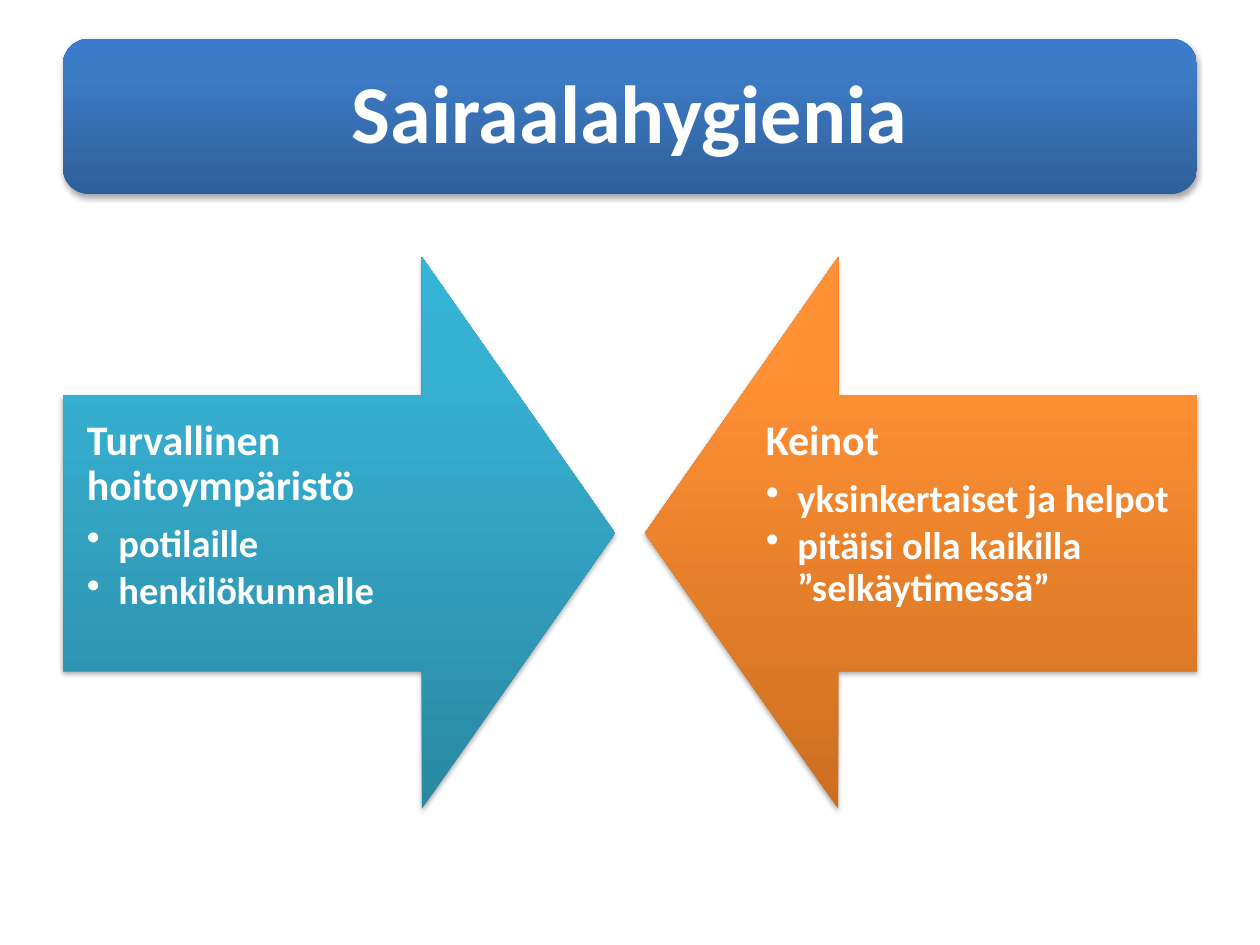
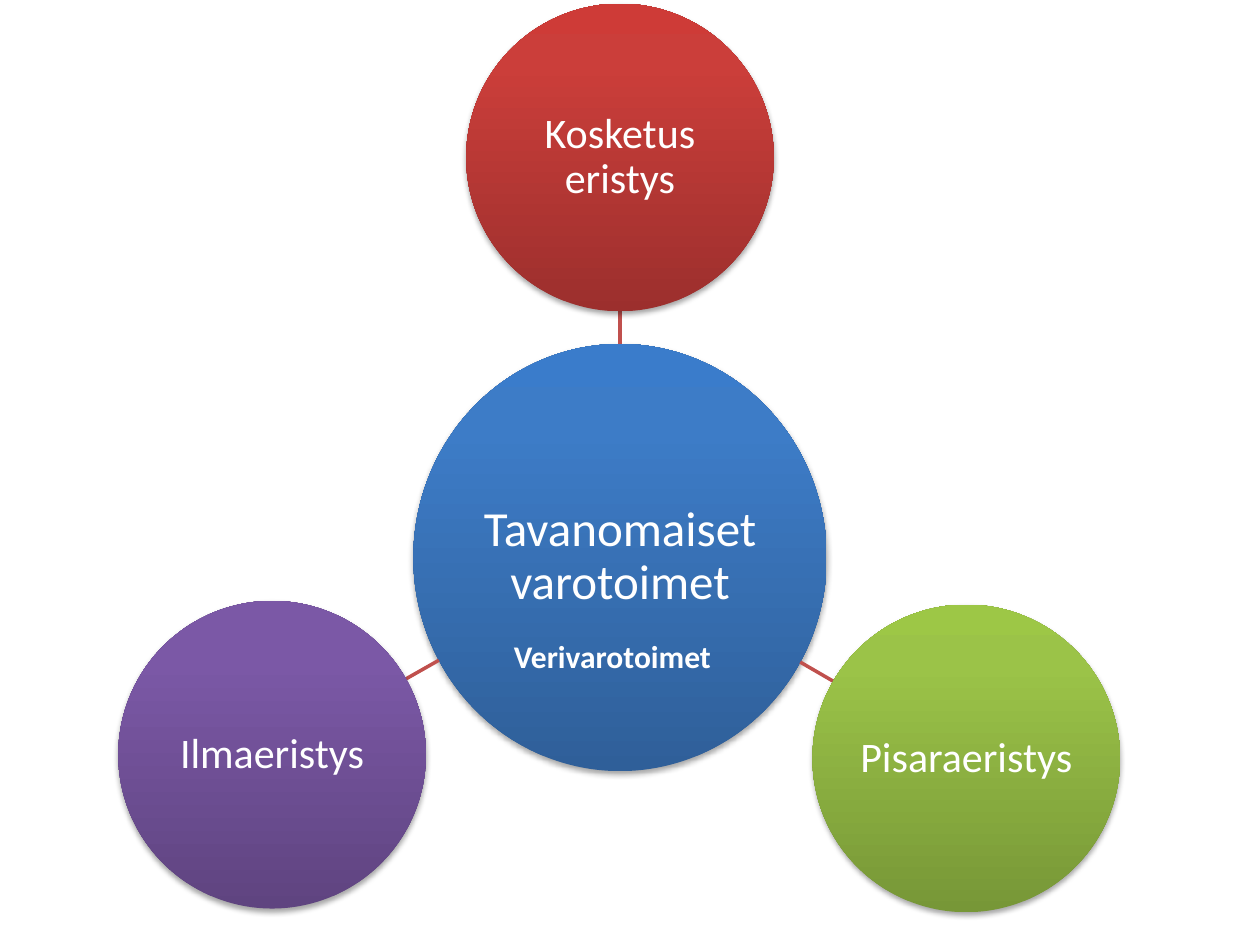
import math
from dataclasses import dataclass

from pptx import Presentation
from pptx.dml.color import RGBColor
from pptx.enum import shapes, text
from pptx.oxml import parse_xml
from pptx.oxml.ns import nsdecls, qn
from pptx.util import Pt


@dataclass(frozen=True)
class Theme:
    font: str = "Calibri"
    ink: str = "FFFFFF"
    spoke: str = "C0504D"
    spoke_width: float = 2
    title: float = 47
    hub: float = 28
    heading: float = 24
    bullet: float = 22
    note: float = 18


THEME = Theme()

# Gradients run from the bottom (0 %) over 80 % to the top (100 %).
GRADIENTS = {
    "blue": ("2F5F99", "3D7CC7", "3A7CCB"),
    "teal": ("2A88A2", "37B1D2", "34B4D6"),
    "orange": ("CC6E20", "FF9034", "FF9136"),
    "red": ("9C2F2D", "CB3E3A", "CE3B37"),
    "green": ("779737", "9BC348", "9DC746"),
    "purple": ("5F4480", "7B58A6", "7C57A8"),
}

TITLE = "Sairaalahygienia"
ARROWS = [
    {"heading": "Turvallinen hoitoympäristö", "colour": "teal", "points": "right",
     "bullets": ["potilaille", "henkilökunnalle"]},
    {"heading": "Keinot", "colour": "orange", "points": "left",
     "bullets": ["yksinkertaiset ja helpot", "pitäisi olla kaikilla ”selkäytimessä”"]},
]
HUB = "Tavanomaiset varotoimet"
HUB_NOTE = "Verivarotoimet"
ISOLATIONS = [  # label, gradient, centre
    ("Kosketus eristys", "red", (354.3, 90)),
    ("Pisaraeristys", "green", (552.2, 433.4)),
    ("Ilmaeristys", "purple", (155.5, 431.3)),
]

SLIDE_W, SLIDE_H, MARGIN = 720, 540, 36
ARROW_SIDE, ARROW_TOP = 315.4, 146.9
ARROW_TEXT_W = 260
HUB_CENTRE, HUB_SIZE = (354.3, 318.6), (236.2, 244.1)
ISOLATION_SIDE = 175.8
HANGING = 18


def points(*lengths):
    return [Pt(length) for length in lengths]


def add_raised(slide, kind, box, colour):
    """Add a preset shape with a vertical gradient, no outline and a soft shadow."""
    shape = slide.shapes.add_shape(kind, *points(*box))
    stops = "".join(
        f'<a:gs pos="{pos}"><a:srgbClr val="{value}"/></a:gs>'
        for pos, value in zip((0, 80000, 100000), GRADIENTS[colour]))
    properties = shape.element.spPr
    properties.insert(2, parse_xml(
        f'<a:gradFill {nsdecls("a")} rotWithShape="0"><a:gsLst>{stops}</a:gsLst>'
        '<a:lin ang="16200000" scaled="0"/></a:gradFill>'))
    shape.line.fill.background()
    shape.shadow.inherit = False
    properties.find(qn("a:effectLst")).append(parse_xml(
        f'<a:outerShdw {nsdecls("a")} blurRad="{Pt(3.1)}" dist="{Pt(1.8)}" '
        'dir="5400000" rotWithShape="0"><a:srgbClr val="000000">'
        '<a:alpha val="35000"/></a:srgbClr></a:outerShdw>'))
    return shape


def set_frame(frame, inset, anchor):
    frame.word_wrap = True
    frame.vertical_anchor = anchor
    frame.margin_left = frame.margin_right = Pt(inset)
    frame.margin_top = frame.margin_bottom = Pt(inset)


def add_words(paragraph, words, size, bold=False):
    run = paragraph.add_run()
    run.text = words
    run.font.name = THEME.font
    run.font.size = Pt(size)
    run.font.bold = bold
    run.font.color.rgb = RGBColor.from_string(THEME.ink)


def set_spacing(paragraph, after_percent):
    paragraph.line_spacing = 0.9
    paragraph._p.get_or_add_pPr().append(parse_xml(
        f'<a:spcAft {nsdecls("a")}><a:spcPct val="{after_percent * 1000}"/></a:spcAft>'))


def set_bullet(paragraph):
    paragraph.level = 1
    properties = paragraph._p.get_or_add_pPr()
    properties.set("marL", str(Pt(HANGING)))
    properties.set("indent", str(Pt(-HANGING)))
    properties.append(parse_xml(f'<a:buChar {nsdecls("a")} char="•"/>'))


def add_label(shape, words, size, inset, bold=False):
    set_frame(shape.text_frame, inset, text.MSO_ANCHOR.MIDDLE)
    paragraph = shape.text_frame.paragraphs[0]
    paragraph.alignment = text.PP_ALIGN.CENTER
    set_spacing(paragraph, 35)
    add_words(paragraph, words, size, bold)


def add_arrow(slide, arrow):
    to_right = arrow["points"] == "right"
    left = MARGIN if to_right else SLIDE_W - MARGIN - ARROW_SIDE
    shape = add_raised(slide, shapes.MSO_SHAPE.DOWN_ARROW,
                       (left, ARROW_TOP, ARROW_SIDE, ARROW_SIDE), arrow["colour"])
    shape.adjustments[0], shape.adjustments[1] = 0.5, 0.35
    shape.rotation = 270 if to_right else 90

    text_left = MARGIN if to_right else SLIDE_W - MARGIN - ARROW_TEXT_W
    shaft = ARROW_SIDE / 2
    frame = slide.shapes.add_textbox(*points(
        text_left, ARROW_TOP + shaft / 2, ARROW_TEXT_W, shaft)).text_frame
    set_frame(frame, 13.7, text.MSO_ANCHOR.TOP)
    heading = frame.paragraphs[0]
    set_spacing(heading, 35)
    add_words(heading, arrow["heading"], THEME.heading, True)
    for words in arrow["bullets"]:
        bullet = frame.add_paragraph()
        set_spacing(bullet, 15)
        set_bullet(bullet)
        add_words(bullet, words, THEME.bullet, True)


def add_circle(slide, centre, size, colour, words, type_size):
    (x, y), (width, height) = centre, size
    circle = add_raised(slide, shapes.MSO_SHAPE.OVAL,
                        (x - width / 2, y - height / 2, width, height), colour)
    add_label(circle, words, type_size, 1.4)


def add_spoke(slide, centre):
    """Draw the line from the edge of the hub to the edge of an isolation circle."""
    hub_x, hub_y = HUB_CENTRE
    x, y = centre
    distance = math.hypot(x - hub_x, y - hub_y)
    dx, dy = (x - hub_x) / distance, (y - hub_y) / distance
    start = 1 / math.hypot(dx / (HUB_SIZE[0] / 2), dy / (HUB_SIZE[1] / 2))
    end = distance - ISOLATION_SIDE / 2
    spoke = slide.shapes.add_connector(shapes.MSO_CONNECTOR.STRAIGHT, *points(
        hub_x + dx * start, hub_y + dy * start, hub_x + dx * end, hub_y + dy * end))
    spoke.line.color.rgb = RGBColor.from_string(THEME.spoke)
    spoke.line.width = Pt(THEME.spoke_width)
    spoke.element.spPr.append(parse_xml(f'<a:effectLst {nsdecls("a")}/>'))


def build_hygiene(slide):
    banner = add_raised(slide, shapes.MSO_SHAPE.ROUNDED_RECTANGLE,
                        (MARGIN, 22.3, SLIDE_W - 2 * MARGIN, 88.6), "blue")
    add_label(banner, TITLE, THEME.title, 14.4, True)
    for arrow in ARROWS:
        add_arrow(slide, arrow)


def build_isolations(slide):
    add_circle(slide, HUB_CENTRE, HUB_SIZE, "blue", HUB, THEME.hub)
    for words, colour, centre in ISOLATIONS:
        add_spoke(slide, centre)
        add_circle(slide, centre, (ISOLATION_SIDE, ISOLATION_SIDE), colour,
                   words, THEME.heading)
    note = slide.shapes.add_textbox(*points(286.6, 360.7, 140.4, 28.8)).text_frame
    note.word_wrap = False
    note.auto_size = text.MSO_AUTO_SIZE.SHAPE_TO_FIT_TEXT
    add_words(note.paragraphs[0], HUB_NOTE, THEME.note, True)


def main():
    deck = Presentation()
    deck.slide_width, deck.slide_height = points(SLIDE_W, SLIDE_H)
    for build in (build_hygiene, build_isolations):
        build(deck.slides.add_slide(deck.slide_layouts[6]))
    deck.save("out.pptx")


if __name__ == "__main__":
    main()
